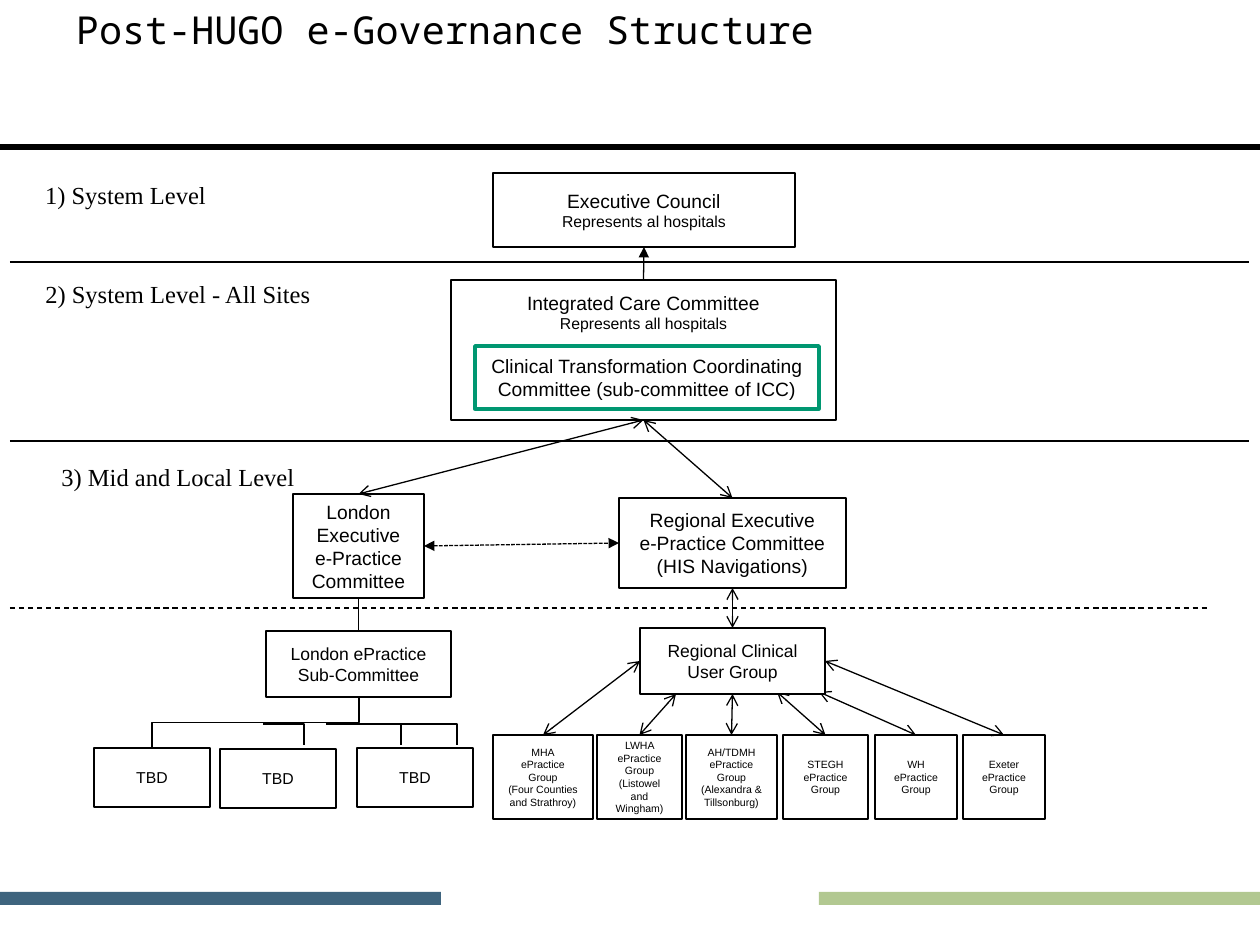
import dataclasses
import typing

import lxml.etree
import pptx
import pptx.dml.color
import pptx.enum.dml
import pptx.enum.shapes
import pptx.enum.text
import pptx.oxml.ns
import pptx.util

EMU_PER_PX = 914400 / 126
BLACK, WHITE, GREEN = "000000", "FFFFFF", "009771"
TOP, LEFT, BOTTOM, RIGHT = range(4)
ALIGN = pptx.enum.text.PP_ALIGN
ANCHOR = pptx.enum.text.MSO_ANCHOR
CONNECTOR = pptx.enum.shapes.MSO_CONNECTOR
DASH = pptx.enum.dml.MSO_LINE


class Point(typing.NamedTuple):
    x: int
    y: int


class Side(typing.NamedTuple):
    """The middle of one side of a box."""
    shape: typing.Any
    index: int


@dataclasses.dataclass
class Box:
    left: int
    top: int
    width: int
    height: int
    lines: list[tuple[str, float]]
    border: str = BLACK
    border_width: float = 1
    anchor: typing.Any = ANCHOR.MIDDLE
    margins: tuple[int, int] = (14, 8)


def px(length: float) -> pptx.util.Emu:
    return pptx.util.Emu(round(length * EMU_PER_PX))


def color(value: str) -> pptx.dml.color.RGBColor:
    return pptx.dml.color.RGBColor.from_string(value)


def write(frame, lines, *, font="Arial", align=ALIGN.CENTER,
          anchor=ANCHOR.MIDDLE, margins=(13, 6)) -> None:
    """Fill a text frame with one paragraph per (text, size) pair."""
    frame.word_wrap = True
    frame.auto_size = pptx.enum.text.MSO_AUTO_SIZE.NONE
    frame.vertical_anchor = anchor
    frame.margin_left = frame.margin_right = px(margins[0])
    frame.margin_top = frame.margin_bottom = px(margins[1])
    for number, (text, size) in enumerate(lines):
        paragraph = frame.add_paragraph() if number else frame.paragraphs[0]
        paragraph.text = text
        paragraph.alignment = align
        paragraph.font.name = font
        paragraph.font.size = pptx.util.Pt(size)
        paragraph.font.color.rgb = color(BLACK)


def add_rectangle(slide, left: int, top: int, width: int, height: int, fill: str):
    shape = slide.shapes.add_shape(pptx.enum.shapes.MSO_SHAPE.RECTANGLE,
                                   px(left), px(top), px(width), px(height))
    shape.shadow.inherit = False
    shape.fill.solid()
    shape.fill.fore_color.rgb = color(fill)
    shape.line.fill.background()
    return shape


def add_box(slide, box: Box):
    shape = add_rectangle(slide, box.left, box.top, box.width, box.height, WHITE)
    shape.line.color.rgb = color(box.border)
    shape.line.width = pptx.util.Pt(box.border_width)
    write(shape.text_frame, box.lines, anchor=box.anchor, margins=box.margins)
    return shape


def add_label(slide, text: str, top: int, width: int, height: int) -> None:
    label = slide.shapes.add_textbox(px(10), px(top), px(width), px(height))
    write(label.text_frame, [(text, 14)], font="Times New Roman", anchor=ANCHOR.TOP)


def style_line(connector, width=0.75, dash=None, head=None, tail=None) -> None:
    connector.line.color.rgb = color(BLACK)
    connector.line.width = pptx.util.Pt(width)
    if dash is not None:
        connector.line.dash_style = dash
    qn = pptx.oxml.ns.qn
    properties = connector._element.spPr
    line = properties.find(qn("a:ln"))
    for tag, kind in (("a:headEnd", head), ("a:tailEnd", tail)):
        if kind:
            lxml.etree.SubElement(line, qn(tag), type=kind)
    lxml.etree.SubElement(properties, qn("a:effectLst"))


def add_line(slide, begin: Point | Side, end: Point | Side, **style) -> None:
    """Draw a straight line, joined to a box at each end given as a Side."""
    start, stop = (px(0), px(0)), (px(0), px(0))
    if isinstance(begin, Point):
        start = (px(begin.x), px(begin.y))
    if isinstance(end, Point):
        stop = (px(end.x), px(end.y))
    connector = slide.shapes.add_connector(CONNECTOR.STRAIGHT, *start, *stop)
    if isinstance(begin, Side):
        connector.begin_connect(begin.shape, begin.index)
    if isinstance(end, Side):
        connector.end_connect(end.shape, end.index)
    style_line(connector, **style)


def add_corner(slide, begin: Point, end: Point) -> None:
    """Draw a line that runs right and then down."""
    connector = slide.shapes.add_connector(
        CONNECTOR.ELBOW, px(begin.x), px(begin.y), px(end.x), px(end.y))
    connector._element.spPr.find(pptx.oxml.ns.qn("a:prstGeom")).set("prst", "bentConnector2")
    style_line(connector)


def add_rising_elbow(slide, begin: Point, end: Point) -> None:
    """Draw a line that runs up, right and up, as a turned elbow connector."""
    across, rise = end.x - begin.x, begin.y - end.y
    left = (begin.x + end.x - rise) / 2
    top = (begin.y + end.y - across) / 2
    connector = slide.shapes.add_connector(
        CONNECTOR.ELBOW, px(left + rise), px(top + across), px(left), px(top))
    connector._element.spPr.find(pptx.oxml.ns.qn("a:xfrm")).set("rot", str(90 * 60000))
    style_line(connector)


def main() -> None:
    presentation = pptx.Presentation()
    presentation.slide_width, presentation.slide_height = px(1260), px(945)
    slide = presentation.slides.add_slide(presentation.slide_layouts[5])

    add_line(slide, Point(0, 147), Point(1260, 147), width=3)
    add_rectangle(slide, 0, 892, 441, 13, "3E647E")
    add_rectangle(slide, 819, 892, 441, 13, "B2C891")
    title = slide.shapes.title
    title.left, title.top, title.width, title.height = px(63), px(0), px(1134), px(157)
    write(title.text_frame, [("Post-HUGO e-Governance Structure", 22)],
          font="Noto Sans Mono", align=ALIGN.LEFT, anchor=ANCHOR.TOP)

    for y, right, dash in ((262, 1249, None), (441, 1249, None), (608, 1208, DASH.DASH)):
        add_line(slide, Point(10, y), Point(right, y), dash=dash)
    add_label(slide, "1) System Level", 174, 231, 35)
    add_label(slide, "2) System Level - All Sites", 273, 336, 77)
    add_label(slide, "3) Mid and Local Level", 456, 336, 77)

    council = add_box(slide, Box(493, 173, 302, 74, [
        ("Executive Council", 11), ("Represents al hospitals", 9)]))
    care = add_box(slide, Box(451, 280, 385, 140, [
        ("Integrated Care Committee", 11), ("Represents all hospitals", 9)],
        anchor=ANCHOR.TOP, margins=(14, 11)))
    add_box(slide, Box(475, 346, 344, 63, [
        ("Clinical Transformation Coordinating Committee (sub-committee of ICC)", 11)],
        border=GREEN, border_width=2, margins=(13, 6)))
    london = add_box(slide, Box(293, 494, 131, 104, [
        ("London Executive", 11), ("e-Practice Committee", 11)]))
    regional = add_box(slide, Box(619, 498, 227, 90, [
        ("Regional Executive", 11), ("e-Practice Committee (HIS Navigations)", 11)]))
    subcommittee = add_box(slide, Box(266, 631, 185, 66, [
        ("London ePractice Sub-Committee", 10)]))

    local_groups = [
        add_box(slide, Box(left, 735, width, 84, [(text, 6) for text in texts]))
        for left, width, texts in (
            (493, 100, ["MHA", "ePractice Group", "(Four Counties and Strathroy)"]),
            (597, 85, ["LWHA ePractice Group (Listowel and Wingham)"]),
            (686, 91, ["AH/TDMH ePractice Group (Alexandra & Tillsonburg)"]),
            (783, 85, ["STEGH ePractice Group"]),
            (875, 82, ["WH ePractice Group"]),
            (963, 82, ["Exeter ePractice Group"]))]
    mha, lwha, alexandra, stegh, wh, exeter = local_groups
    arrows = {"head": "arrow", "tail": "arrow"}
    for group, end in ((lwha, Point(676, 694)), (stegh, Point(777, 692)),
                       (wh, Point(819, 692))):
        add_line(slide, Side(group, TOP), end, **arrows)
    users = add_box(slide, Box(640, 628, 185, 66, [("Regional Clinical User Group", 10)]))
    for begin, end in (
            (Side(mha, TOP), Side(users, LEFT)),
            (Side(alexandra, TOP), Side(users, BOTTOM)),
            (Side(exeter, TOP), Side(users, RIGHT)),
            (Side(users, TOP), Side(regional, BOTTOM)),
            (Side(london, TOP), Side(care, BOTTOM)),
            (Side(regional, TOP), Side(care, BOTTOM))):
        add_line(slide, begin, end, **arrows)
    add_line(slide, Side(london, RIGHT), Side(regional, LEFT),
             dash=DASH.SQUARE_DOT, head="triangle", tail="triangle")
    add_line(slide, Side(care, TOP), Side(council, BOTTOM), tail="triangle")
    add_line(slide, Side(subcommittee, TOP), Side(london, BOTTOM))

    add_rising_elbow(slide, Point(152, 748), Point(359, 697))
    for left, right in ((263, 304), (359, 401), (326, 457)):
        add_corner(slide, Point(left, 724), Point(right, 745))
    for left, top in ((94, 748), (220, 749), (357, 748)):
        add_box(slide, Box(left, top, 116, 59, [("TBD", 9)]))

    presentation.save("out.pptx")


if __name__ == "__main__":
    main()
